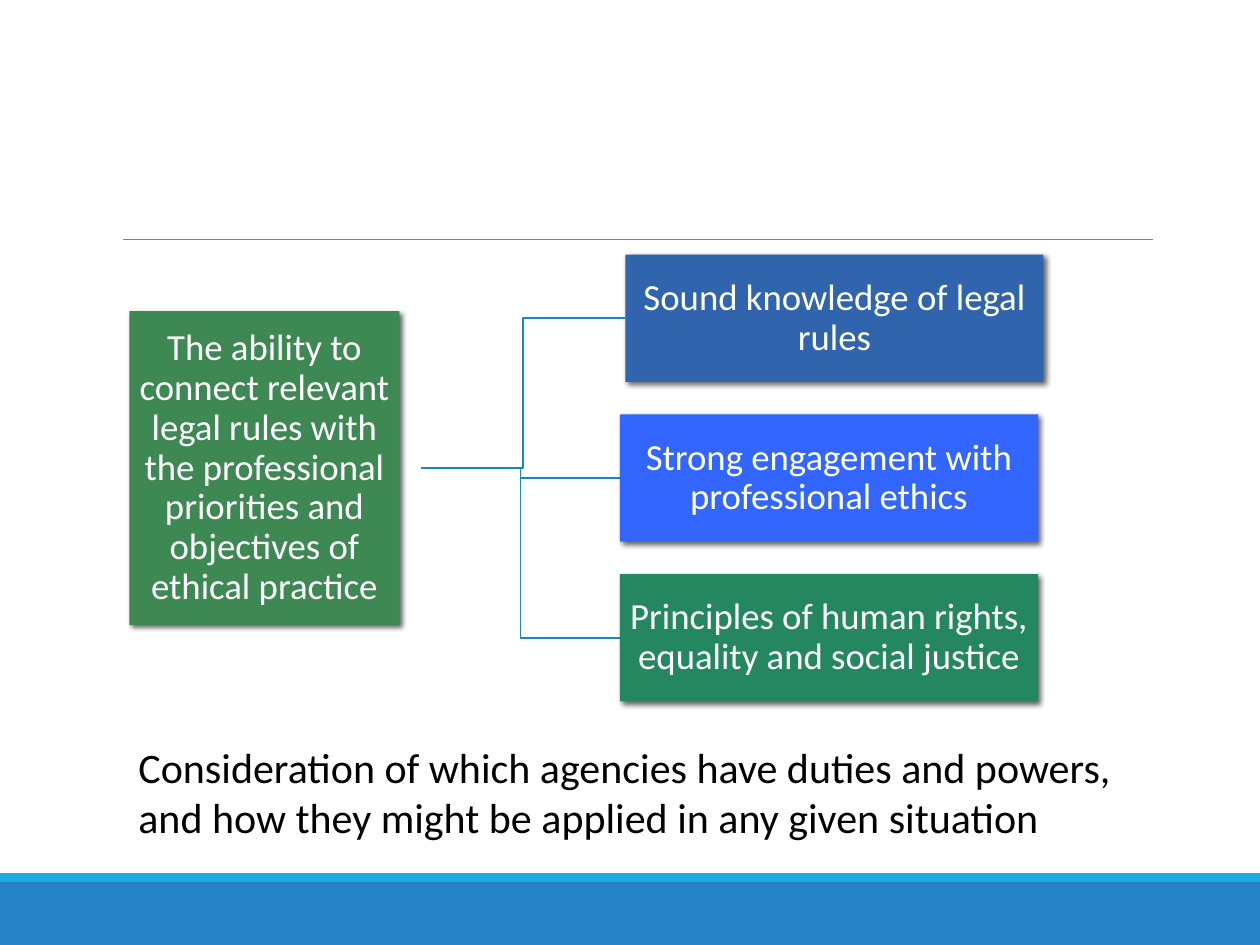
"""Build a slide linking legal rules and ethical practice to three foundations."""
from dataclasses import dataclass

from lxml import etree
from pptx import Presentation
from pptx import util as u
from pptx.dml.color import RGBColor
from pptx.enum import shapes, text
from pptx.oxml import ns

WHITE = RGBColor(0xFF, 0xFF, 0xFF)
BLACK = RGBColor(0x00, 0x00, 0x00)
GREY = RGBColor(0x80, 0x80, 0x80)
BLUE = RGBColor(0x26, 0x83, 0xC6)
CYAN = RGBColor(0x1C, 0xAD, 0xE4)
BRANCH = RGBColor(0x16, 0x8B, 0xB7)
GREEN = RGBColor(0x3E, 0x88, 0x53)
NAVY = RGBColor(0x30, 0x64, 0xAC)
ROYAL = RGBColor(0x33, 0x66, 0xFF)
TEAL = RGBColor(0x25, 0x87, 0x60)

FONT = "Calibri"
FIRST_TOP, PITCH = 145.5, 91.3
BRANCH_WIDTH, BRANCH_HEIGHT = 239, 72.7
BRANCH_START = 240.7


@dataclass(frozen=True)
class Box:
    """A filled rectangle with its label, measured in points."""

    left: float
    top: float
    width: float
    height: float
    fill: RGBColor
    label: str = ""

    @property
    def middle(self) -> float:
        """Return the vertical centre."""
        return self.top + self.height / 2


BANDS = (
    Box(0, 504, 720, 36, BLUE),
    Box(0, 499, 720, 5, CYAN),
)
ROOT = Box(74, 177.8, 154.2, 179.5, GREEN,
           "The ability to connect relevant legal rules with the professional "
           "priorities and objectives of ethical practice")
FOUNDATIONS = [
    Box(left, FIRST_TOP + row * PITCH, BRANCH_WIDTH, BRANCH_HEIGHT, fill, label)
    for row, (left, fill, label) in enumerate((
        (357.3, NAVY, "Sound knowledge of legal rules"),
        (354.2, ROYAL, "Strong engagement with professional ethics"),
        (354.2, TEAL, "Principles of human rights, equality and social justice"),
    ))
]
CLOSING = ("Consideration of which agencies have duties and powers, "
           "and how they might be applied in any given situation")


def add_effects(properties, shadow: bool = False) -> None:
    """Append an effect list, holding a soft shadow when asked for."""
    effects = etree.SubElement(properties, ns.qn("a:effectLst"))
    if shadow:
        outer = etree.SubElement(
            effects, ns.qn("a:outerShdw"), blurRad=str(u.Pt(3)),
            dist=str(u.Pt(2)), dir="2700000", algn="ctr", rotWithShape="0")
        colour = etree.SubElement(outer, ns.qn("a:srgbClr"), val=str(BLACK))
        etree.SubElement(colour, ns.qn("a:alpha"), val="60000")


def style_text(frame, label: str, size: float, colour: RGBColor):
    """Fill a frame with one styled paragraph and return that paragraph."""
    frame.word_wrap = True
    frame.text = label
    para = frame.paragraphs[0]
    font = para.runs[0].font
    font.name, font.size = FONT, u.Pt(size)
    font.color.rgb = colour
    return para


def draw_box(page, box: Box) -> None:
    """Draw a rectangle; a labelled one gets a shadow and centred text."""
    shape = page.shapes.add_shape(
        shapes.MSO_SHAPE.RECTANGLE, u.Pt(box.left), u.Pt(box.top),
        u.Pt(box.width), u.Pt(box.height))
    shape.fill.solid()
    shape.fill.fore_color.rgb = box.fill
    shape.line.fill.background()
    add_effects(shape.element.spPr, shadow=bool(box.label))
    if box.label:
        frame = shape.text_frame
        frame.margin_left = frame.margin_right = u.Pt(0.75)
        frame.margin_top = frame.margin_bottom = u.Pt(0.75)
        frame.vertical_anchor = text.MSO_ANCHOR.MIDDLE
        para = style_text(frame, box.label, 21, WHITE)
        para.alignment = text.PP_ALIGN.CENTER
        para.line_spacing = 0.9


def draw_branch(page, target: Box) -> None:
    """Draw the elbow line from the root to a foundation."""
    bend = (BRANCH_START + target.left) / 2
    corners = ((bend, ROOT.middle), (bend, target.middle),
               (target.left, target.middle))
    builder = page.shapes.build_freeform(u.Pt(BRANCH_START), u.Pt(ROOT.middle))
    builder.add_line_segments([(u.Pt(x), u.Pt(y)) for x, y in corners], close=False)
    branch = builder.convert_to_shape()
    branch.fill.background()
    branch.line.color.rgb = BRANCH
    branch.line.width = u.Pt(1)
    branch.shadow.inherit = False


def draw_rule(page) -> None:
    """Draw the thin line under the title area."""
    rule = page.shapes.add_connector(
        shapes.MSO_CONNECTOR.STRAIGHT, u.Pt(70.5), u.Pt(136.8),
        u.Pt(658.8), u.Pt(136.8))
    rule.line.color.rgb = GREY
    rule.line.width = u.Pt(0.5)
    add_effects(rule.element.spPr)


def main() -> None:
    """Assemble and save the deck."""
    deck = Presentation()
    deck.slide_width, deck.slide_height = u.Pt(720), u.Pt(540)
    page = deck.slides.add_slide(deck.slide_layouts[6])
    for band in BANDS:
        draw_box(page, band)
    draw_rule(page)
    for foundation in reversed(FOUNDATIONS):
        draw_branch(page, foundation)
    for box in (ROOT, *FOUNDATIONS):
        draw_box(page, box)
    closing = page.shapes.add_textbox(u.Pt(72), u.Pt(420), u.Pt(576.7), u.Pt(65.5))
    style_text(closing.text_frame, CLOSING, 24, BLACK)
    deck.save("out.pptx")


if __name__ == "__main__":
    main()
